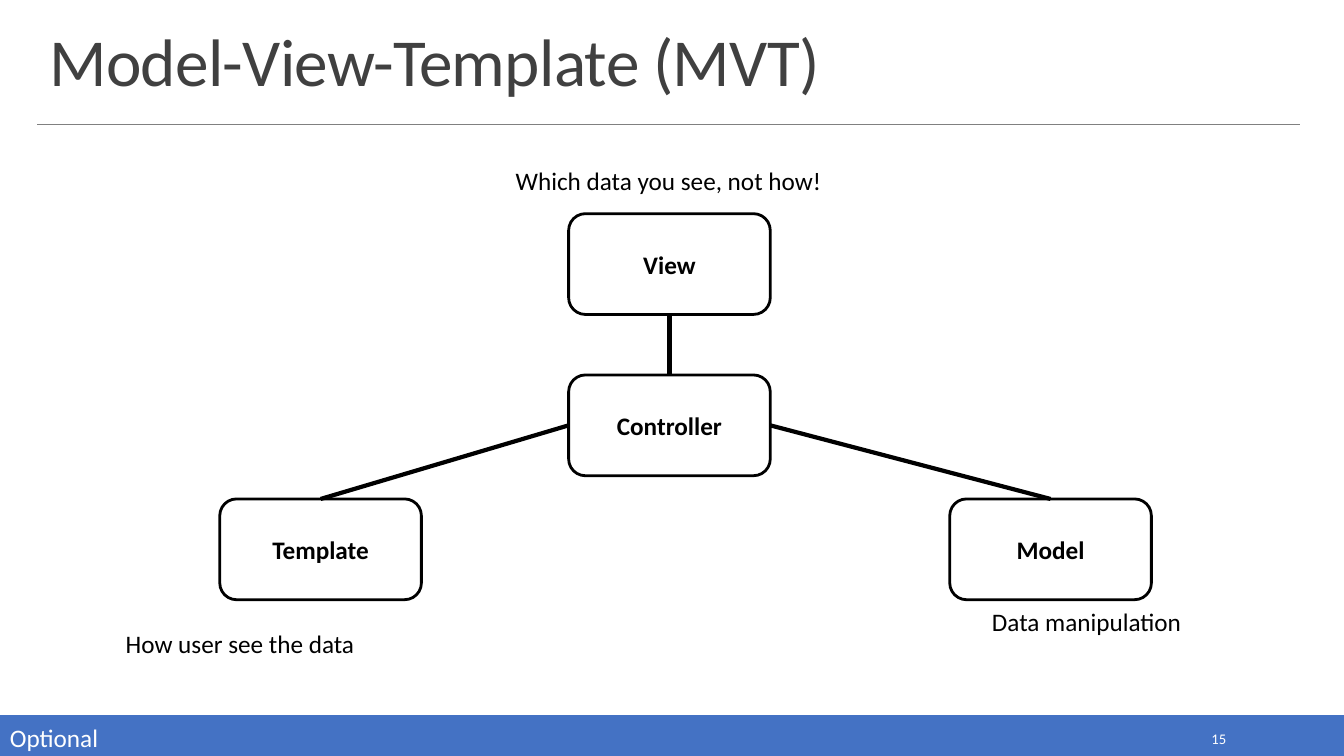
from dataclasses import dataclass

from lxml import etree
from pptx import Presentation
from pptx import util as u
from pptx.dml.color import RGBColor
from pptx.enum import shapes, text
from pptx.oxml.ns import qn

BLACK = RGBColor(0x00, 0x00, 0x00)
WHITE = RGBColor(0xFF, 0xFF, 0xFF)
BLUE = RGBColor(0x44, 0x72, 0xC4)
GRAY = RGBColor(0x80, 0x80, 0x80)
DARK_GRAY = RGBColor(0x40, 0x40, 0x40)

FONT = "Calibri"
BOX_WIDTH, BOX_HEIGHT = 2, 1
TOP, LEFT, BOTTOM, RIGHT = range(4)
ALIGN = text.PP_ALIGN
ANCHOR = text.MSO_ANCHOR


@dataclass(frozen=True)
class Component:
    name: str
    left: float
    top: float


@dataclass(frozen=True)
class Link:
    start: str
    start_side: int
    end: str
    end_side: int


@dataclass(frozen=True)
class Label:
    words: str
    left: float
    top: float
    width: float
    height: float = 0.4
    size: float = 18
    color: RGBColor = BLACK
    align: ALIGN = ALIGN.LEFT
    anchor: ANCHOR = ANCHOR.TOP
    grow: bool = True


COMPONENTS = [
    Component("View", 5.64, 2.12),
    Component("Controller", 5.64, 3.72),
    Component("Template", 2.18, 4.95),
    Component("Model", 9.42, 4.95),
]
LINKS = [
    Link("View", BOTTOM, "Controller", TOP),
    Link("Controller", LEFT, "Template", TOP),
    Link("Controller", RIGHT, "Model", TOP),
]
LABELS = [
    Label("Which data you see, not how!", 4.62, 1.59, 4.02, align=ALIGN.CENTER),
    Label("How user see the data", 0.37, 6.18, 4.02, align=ALIGN.CENTER),
    Label("Data manipulation", 9.74, 5.97, 2.91),
    Label("Optional", 0, 7.12, 6.63, color=WHITE),
    Label("15", 10.83, 7.19, 1.43, 0.28, size=10.5, color=WHITE,
          align=ALIGN.RIGHT, anchor=ANCHOR.MIDDLE, grow=False),
]


def write_text(shape, words: str, *, size: float, color: RGBColor = BLACK,
               bold: bool = False, align: ALIGN = ALIGN.LEFT,
               anchor: ANCHOR = ANCHOR.TOP, line_spacing: float | None = None,
               letter_spacing: float = 0) -> None:
    frame = shape.text_frame
    frame.word_wrap = True
    frame.vertical_anchor = anchor
    paragraph = frame.paragraphs[0]
    paragraph.alignment = align
    paragraph.line_spacing = line_spacing
    run = paragraph.add_run()
    run.text = words
    run.font.name = FONT
    run.font.size = u.Pt(size)
    run.font.bold = bold
    run.font.color.rgb = color
    if letter_spacing:
        run._r.get_or_add_rPr().set("spc", str(round(letter_spacing * 100)))


def add_line(slide, start: tuple[float, float], end: tuple[float, float],
             color: RGBColor, width: float):
    line = slide.shapes.add_connector(
        shapes.MSO_CONNECTOR.STRAIGHT, *map(u.Inches, start + end))
    line.line.color.rgb = color
    line.line.width = u.Pt(width)
    etree.SubElement(line._element.spPr, qn("a:effectLst"))
    return line


def add_frame(slide) -> None:
    bar = slide.shapes.add_shape(
        shapes.MSO_SHAPE.RECTANGLE, 0, u.Inches(7.1), u.Inches(13.33), u.Inches(0.4))
    bar.shadow.inherit = False
    bar.fill.solid()
    bar.fill.fore_color.rgb = BLUE
    bar.line.color.rgb = BLUE
    bar.line.width = u.Pt(1.25)
    add_line(slide, (0.37, 1.23), (12.89, 1.23), GRAY, 0.5)


def add_title(slide, words: str) -> None:
    title = slide.shapes.title
    title.left, title.top = u.Inches(0.39), u.Inches(0.2)
    title.width, title.height = u.Inches(12.52), u.Inches(0.84)
    title.text_frame.auto_size = text.MSO_AUTO_SIZE.NONE
    write_text(title, words, size=48, color=DARK_GRAY, anchor=ANCHOR.BOTTOM,
               line_spacing=0.85, letter_spacing=-0.5)


def add_component(slide, component: Component):
    box = slide.shapes.add_shape(
        shapes.MSO_SHAPE.ROUNDED_RECTANGLE, u.Inches(component.left),
        u.Inches(component.top), u.Inches(BOX_WIDTH), u.Inches(BOX_HEIGHT))
    box.shadow.inherit = False
    box.fill.background()
    box.line.color.rgb = BLACK
    box.line.width = u.Pt(2)
    write_text(box, component.name, size=18, bold=True,
               align=ALIGN.CENTER, anchor=ANCHOR.MIDDLE)
    return box


def add_link(slide, link: Link, boxes: dict) -> None:
    line = add_line(slide, (0, 0), (1, 1), BLACK, 3)
    line.begin_connect(boxes[link.start], link.start_side)
    line.end_connect(boxes[link.end], link.end_side)


def add_label(slide, label: Label) -> None:
    box = slide.shapes.add_textbox(
        u.Inches(label.left), u.Inches(label.top),
        u.Inches(label.width), u.Inches(label.height))
    if label.grow:
        box.text_frame.auto_size = text.MSO_AUTO_SIZE.SHAPE_TO_FIT_TEXT
    write_text(box, label.words, size=label.size, color=label.color,
               align=label.align, anchor=label.anchor)


def main() -> None:
    presentation = Presentation()
    presentation.slide_width = u.Inches(13.33)
    presentation.slide_height = u.Inches(7.5)
    slide = presentation.slides.add_slide(presentation.slide_layouts[5])
    add_frame(slide)
    add_title(slide, "Model-View-Template (MVT)")
    boxes = {component.name: add_component(slide, component)
             for component in COMPONENTS}
    for link in LINKS:
        add_link(slide, link, boxes)
    for label in LABELS:
        add_label(slide, label)
    presentation.save("out.pptx")


if __name__ == "__main__":
    main()
